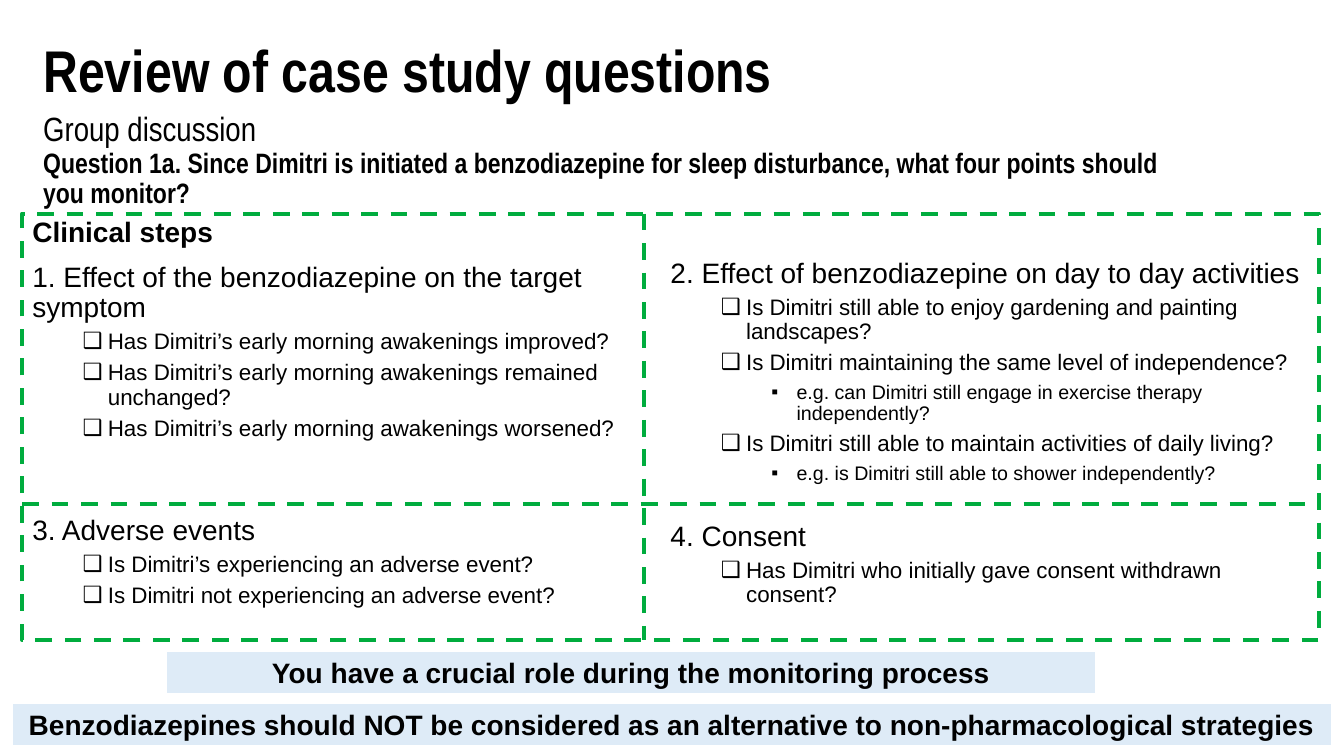
from dataclasses import dataclass

from lxml.etree import SubElement
from pptx import Presentation
from pptx.dml.color import RGBColor
from pptx.enum.dml import MSO_LINE
from pptx.enum.shapes import MSO_CONNECTOR, MSO_SHAPE
from pptx.enum.text import MSO_ANCHOR, MSO_AUTO_SIZE, PP_ALIGN
from pptx.oxml.ns import qn
from pptx.util import Inches, Pt


@dataclass(frozen=True)
class Theme:
    ink: RGBColor = RGBColor(0, 0, 0)
    white: RGBColor = RGBColor(0xFF, 0xFF, 0xFF)
    green: RGBColor = RGBColor(0x00, 0xAC, 0x3E)
    pale_blue: RGBColor = RGBColor(0xDE, 0xEB, 0xF7)
    heading_font: str = "Arial Narrow"
    body_font: str = "Arial"
    title_size: int = 42
    subtitle_size: int = 24
    heading_size: int = 20
    level_sizes: tuple = (20, 16, 14)
    bullets: tuple = (None, "❑", "▪")


THEME = Theme()

# Frame of the four quadrants, in inches
LEFT, TOP, WIDTH, HEIGHT = 0.22, 2.12, 12.86, 4.23
RIGHT, BOTTOM = LEFT + WIDTH, TOP + HEIGHT
MIDDLE_X, MIDDLE_Y = 6.39, 5.0
RIGHT_TEXT = 6.55
COLUMN_WIDTH = 6.53

# Each quadrant: placeholder index, left, top, bottom, lines of (level, text)
QUADRANTS = [
    (1, LEFT, TOP, MIDDLE_Y, [
        (0, "Clinical steps"),
        (0, "1. Effect of the benzodiazepine on the target symptom"),
        (1, "Has Dimitri’s early morning awakenings improved?"),
        (1, "Has Dimitri’s early morning awakenings remained unchanged?"),
        (1, "Has Dimitri’s early morning awakenings worsened?"),
    ]),
    (2, RIGHT_TEXT, 2.52, MIDDLE_Y, [
        (0, "2. Effect of benzodiazepine on day to day activities"),
        (1, "Is Dimitri still able to enjoy gardening and painting landscapes?"),
        (1, "Is Dimitri maintaining the same level of independence?"),
        (2, "e.g. can Dimitri still engage in exercise therapy independently?"),
        (1, "Is Dimitri still able to maintain activities of daily living?"),
        (2, "e.g. is Dimitri still able to shower independently?"),
    ]),
    (3, LEFT, 5.07, BOTTOM, [
        (0, "3. Adverse events"),
        (1, "Is Dimitri’s experiencing an adverse event?"),
        (1, "Is Dimitri not experiencing an adverse event?"),
    ]),
    (4, RIGHT_TEXT, 5.13, BOTTOM, [
        (0, "4. Consent"),
        (1, "Has Dimitri who initially gave consent withdrawn consent?"),
    ]),
]


def place(shape, left, top, width, height):
    shape.left, shape.top = Inches(left), Inches(top)
    shape.width, shape.height = Inches(width), Inches(height)


def prepare_frame(shape):
    frame = shape.text_frame
    frame.word_wrap = True
    frame.auto_size = MSO_AUTO_SIZE.NONE
    frame.vertical_anchor = MSO_ANCHOR.TOP
    return frame


def format_font(para, name, size, bold):
    para.font.name = name
    para.font.size = Pt(size)
    para.font.bold = bold
    para.font.color.rgb = THEME.ink


def set_level(para, level):
    """Set the indent and the bullet of a list level."""
    para.level = level
    properties = para._p.get_or_add_pPr()
    hanging = 0.25 if level else 0
    properties.set("marL", str(Inches(0.5 * level + hanging)))
    properties.set("indent", str(Inches(-hanging)))
    bullet = THEME.bullets[level]
    if bullet:
        SubElement(properties, qn("a:buFont"), typeface=THEME.body_font)
        SubElement(properties, qn("a:buChar"), char=bullet)
    else:
        SubElement(properties, qn("a:buNone"))


def add_heading(shape, text, size, bold):
    """Fill one line of the slide's heading."""
    para = prepare_frame(shape).paragraphs[0]
    para.text = text
    para.alignment = PP_ALIGN.LEFT
    para.line_spacing = 0.9
    para.space_before = Pt(0)
    format_font(para, THEME.heading_font, size, bold)


def add_header(page):
    title = page.shapes.title
    place(title, 0.33, 0.36, 10.78, 0.81)
    add_heading(title, "Review of case study questions", THEME.title_size, True)
    for top, width, height, text, size, bold in [
        (1.07, 8.15, 0.51, "Group discussion", THEME.subtitle_size, False),
        (1.43, 11.33, 0.65, "Question 1a. Since Dimitri is initiated a benzodiazepine for sleep "
         "disturbance, what four points should you monitor?", THEME.heading_size, True),
    ]:
        box = page.shapes.add_textbox(Inches(0.33), Inches(top), Inches(width), Inches(height))
        add_heading(box, text, size, bold)


def dash_line(line):
    line.color.rgb = THEME.green
    line.width = Pt(3)
    line.dash_style = MSO_LINE.DASH


def add_grid(page):
    """Draw the dashed frame and its two dividers."""
    outline = page.shapes.add_shape(
        MSO_SHAPE.RECTANGLE, Inches(LEFT), Inches(TOP), Inches(WIDTH), Inches(HEIGHT))
    outline.shadow.inherit = False
    outline.fill.background()
    dash_line(outline.line)
    for ends in [(MIDDLE_X, TOP, MIDDLE_X, BOTTOM), (LEFT, MIDDLE_Y, RIGHT, MIDDLE_Y)]:
        divider = page.shapes.add_connector(MSO_CONNECTOR.STRAIGHT, *map(Inches, ends))
        dash_line(divider.line)
        SubElement(divider._element.spPr, qn("a:effectLst"))


def add_quadrant(box, left, top, bottom, lines):
    place(box, left, top, COLUMN_WIDTH, bottom - top)
    frame = prepare_frame(box)
    for number, (level, text) in enumerate(lines):
        para = frame.add_paragraph() if number else frame.paragraphs[0]
        para.text = text
        set_level(para, level)
        para.line_spacing = 0.9
        para.space_before = Pt((5 if level else 10) if number else 0)
        format_font(para, THEME.body_font, THEME.level_sizes[level], text == "Clinical steps")


def add_banner(page, left, top, width, text):
    banner = page.shapes.add_shape(
        MSO_SHAPE.RECTANGLE, Inches(left), Inches(top), Inches(width), Inches(0.44))
    banner.shadow.inherit = False
    banner.fill.solid()
    banner.fill.fore_color.rgb = THEME.pale_blue
    banner.line.color.rgb = THEME.white
    banner.line.width = Pt(2.25)
    para = prepare_frame(banner).paragraphs[0]
    para.text = text
    para.alignment = PP_ALIGN.CENTER
    format_font(para, THEME.body_font, THEME.heading_size, True)


def main():
    deck = Presentation()
    deck.slide_width, deck.slide_height = Inches(13.33), Inches(7.5)
    comparison_layout = deck.slide_layouts[4]
    page = deck.slides.add_slide(comparison_layout)
    add_header(page)
    add_grid(page)
    bodies = {body.placeholder_format.idx: body for body in page.placeholders}
    for index, *content in QUADRANTS:
        add_quadrant(bodies[index], *content)
    add_banner(page, 1.64, 6.45, 9.24, "You have a crucial role during the monitoring process")
    add_banner(page, 0.11, 6.97, 13.11, "Benzodiazepines should NOT be considered as an "
               "alternative to non-pharmacological strategies")
    deck.save("out.pptx")


if __name__ == "__main__":
    main()
